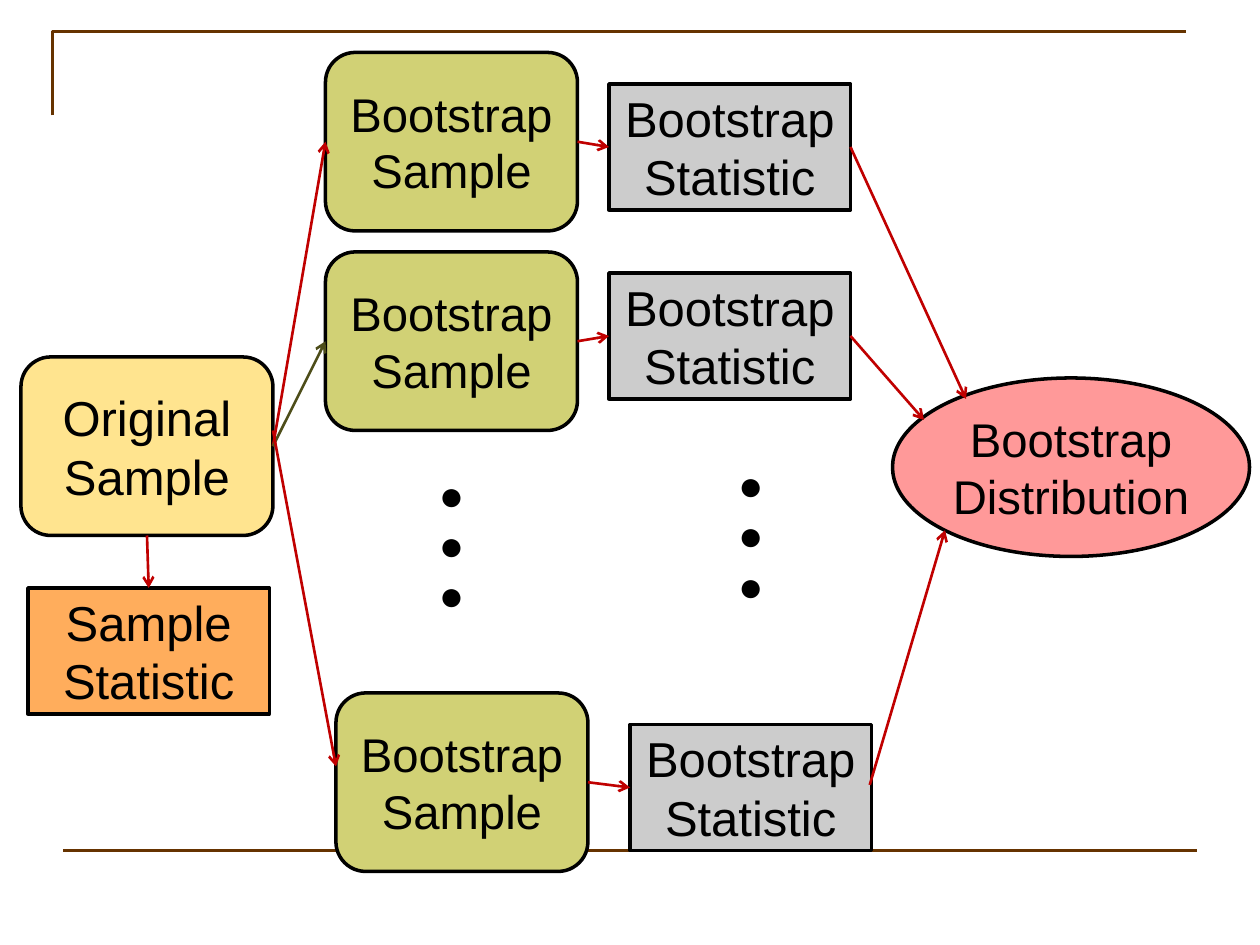
from dataclasses import dataclass

import pptx
import pptx.dml.color
import pptx.enum.shapes
import pptx.enum.text
import pptx.oxml
import pptx.oxml.ns
import pptx.util
from pptx.util import Pt

SHAPE = pptx.enum.shapes.MSO_SHAPE
COLORS = {
    "frame": "663300",
    "ink": "000000",
    "original": "FFE48F",
    "sample": "D1D175",
    "statistic": "CCCCCC",
    "sample_statistic": "FFAD5C",
    "distribution": "FF9999",
    "arrow": "C00000",
    "dark_arrow": "4D4D19",
}
FONT = "Arial"
Point = tuple[float, float]


@dataclass(frozen=True)
class Node:
    """A labelled box; all lengths are in points."""
    text: str
    left: float
    top: float
    width: float
    height: float
    kind: pptx.enum.shapes.MSO_SHAPE
    fill: str
    size: float
    inset: Point = (7.2, 3.6)

    @property
    def west(self) -> Point:
        return self.left, self.top + self.height / 2

    @property
    def east(self) -> Point:
        return self.left + self.width, self.top + self.height / 2

    @property
    def north(self) -> Point:
        return self.left + self.width / 2, self.top

    @property
    def south(self) -> Point:
        return self.left + self.width / 2, self.top + self.height


def rgb(name: str) -> pptx.dml.color.RGBColor:
    return pptx.dml.color.RGBColor.from_string(COLORS[name])


def add_text(paragraph, text: str, size: float) -> None:
    paragraph.alignment = pptx.enum.text.PP_ALIGN.CENTER
    for index, line in enumerate(text.split("\n")):
        if index:
            paragraph.add_line_break()
        run = paragraph.add_run()
        run.text = line
        run.font.name = FONT
        run.font.size = Pt(size)
        run.font.color.rgb = rgb("ink")


def draw_node(slide, node: Node) -> None:
    box = slide.shapes.add_shape(
        node.kind, Pt(node.left), Pt(node.top), Pt(node.width), Pt(node.height))
    box.shadow.inherit = False
    box.fill.solid()
    box.fill.fore_color.rgb = rgb(node.fill)
    box.line.color.rgb = rgb("ink")
    box.line.width = Pt(2)
    frame = box.text_frame
    frame.word_wrap = True
    frame.vertical_anchor = pptx.enum.text.MSO_ANCHOR.MIDDLE
    frame.margin_left = frame.margin_right = Pt(node.inset[0])
    frame.margin_top = frame.margin_bottom = Pt(node.inset[1])
    add_text(frame.paragraphs[0], node.text, node.size)


def draw_line(slide, start: Point, end: Point, color: str, arrow: bool = True) -> None:
    line = slide.shapes.add_connector(
        pptx.enum.shapes.MSO_CONNECTOR.STRAIGHT, *map(Pt, start + end))
    line.line.color.rgb = rgb(color)
    line.line.width = Pt(1.5)
    if arrow:
        head = pptx.oxml.parse_xml(
            f'<a:tailEnd {pptx.oxml.ns.nsdecls("a")} type="arrow"/>')
        line.line._get_or_add_ln().append(head)
    line._element.spPr.append(
        pptx.oxml.parse_xml(f'<a:effectLst {pptx.oxml.ns.nsdecls("a")}/>'))


def draw_dots(slide, left: float, top: float) -> None:
    dots = slide.shapes.add_textbox(Pt(left), Pt(top), Pt(90), Pt(124)).text_frame
    dots.word_wrap = True
    for index in range(3):
        paragraph = dots.add_paragraph() if index else dots.paragraphs[0]
        add_text(paragraph, "●", 24)


def draw_frame(slide) -> None:
    builder = slide.shapes.build_freeform(Pt(30), Pt(66), scale=1.0)
    builder.add_line_segments([(Pt(30), Pt(18)), (Pt(678), Pt(18))], close=False)
    corner = builder.convert_to_shape()
    corner.shadow.inherit = False
    corner.fill.background()
    corner.line.color.rgb = rgb("frame")
    corner.line.width = Pt(1.5)
    draw_line(slide, (36, 486), (684, 486), "frame", arrow=False)


def main() -> None:
    deck = pptx.Presentation()
    deck.slide_width, deck.slide_height = Pt(720), Pt(540)
    slide = deck.slides.add_slide(deck.slide_layouts[6])
    draw_frame(slide)

    # Boxes
    original = Node("Original Sample", 12, 204, 144, 102,
                    SHAPE.ROUNDED_RECTANGLE, "original", 28)
    sample_statistic = Node("Sample Statistic", 16, 336, 138, 72,
                            SHAPE.RECTANGLE, "sample_statistic", 28)
    samples = [Node("Bootstrap\nSample", left, top, 144, 102,
                    SHAPE.ROUNDED_RECTANGLE, "sample", 27)
               for left, top in ((186, 30), (186, 144), (192, 396))]
    statistics = [Node("Bootstrap Statistic", left, top, 138, 72,
                       SHAPE.RECTANGLE, "statistic", 28)
                  for left, top in ((348, 48), (348, 156), (360, 414))]
    distribution = Node("Bootstrap Distribution", 510, 216, 204, 102,
                        SHAPE.OVAL, "distribution", 27, inset=(0, 0))
    for node in (original, sample_statistic, *samples, *statistics, distribution):
        draw_node(slide, node)

    # Dots for the samples and statistics left out
    draw_dots(slide, 213, 264)
    draw_dots(slide, 384, 258.5)

    # Original sample to its statistic and to the resamples
    draw_line(slide, original.south, sample_statistic.north, "arrow")
    draw_line(slide, original.east, samples[0].west, "arrow")
    draw_line(slide, original.east, samples[1].west, "dark_arrow")
    draw_line(slide, (156, 246), (192, 438), "arrow")

    # Each resample to its statistic
    for sample, statistic in zip(samples, statistics):
        draw_line(slide, sample.east, statistic.west, "arrow")

    # Statistics to the distribution
    starts = (statistics[0].east, statistics[1].east, (497, 448.5))
    for start, end in zip(starts, ((552, 228), (528, 240), (540, 303))):
        draw_line(slide, start, end, "arrow")

    deck.save("out.pptx")


if __name__ == "__main__":
    main()
